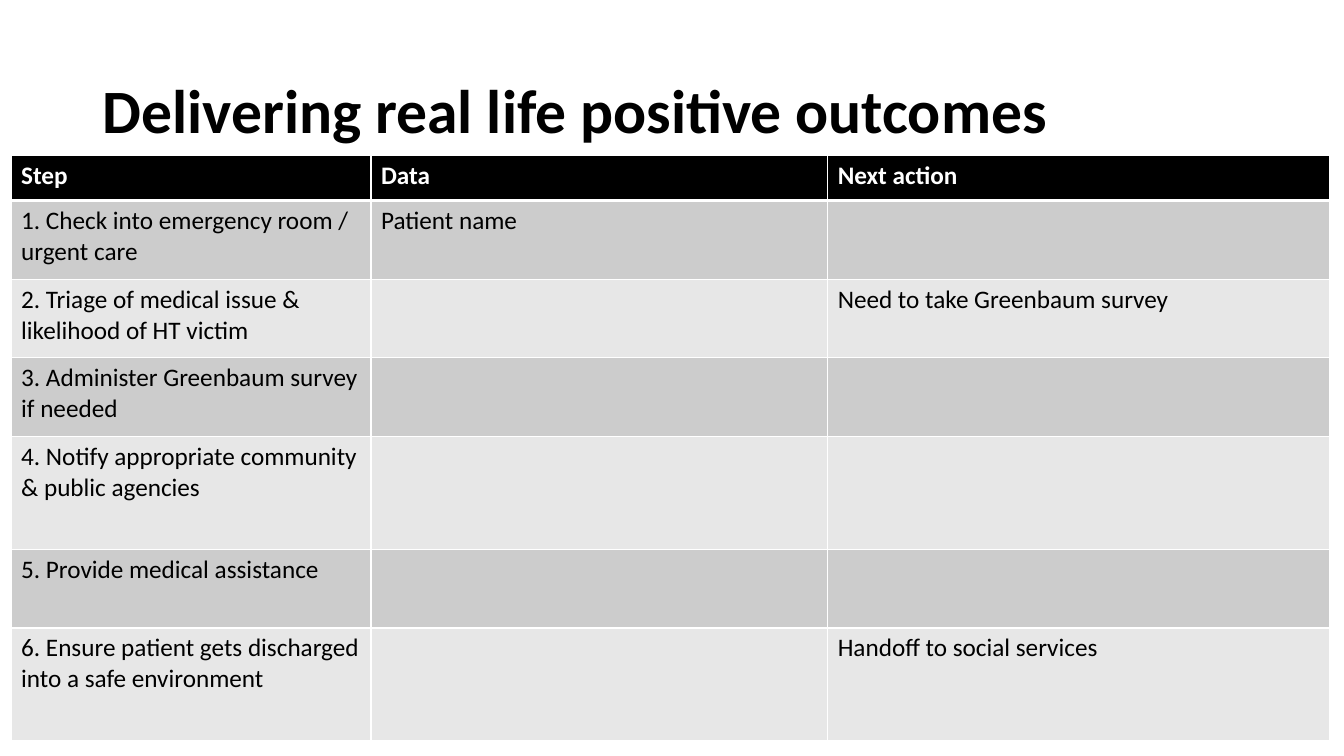
from dataclasses import dataclass

from lxml.etree import SubElement
from pptx import Presentation
from pptx.dml.color import RGBColor
from pptx.enum.text import MSO_ANCHOR
from pptx.oxml.ns import qn
from pptx.slide import Slide
from pptx.table import _Cell
from pptx.text.text import TextFrame
from pptx.util import Inches, Pt


@dataclass(frozen=True)
class Theme:
    """Colours, font and type sizes."""
    font: str = "Calibri"
    title_size: int = 44
    body_size: int = 18
    dark: str = "000000"
    light: str = "FFFFFF"
    bands: tuple[str, str] = ("CCCCCC", "E7E7E7")
    rule: float = 1
    header_rule: float = 3


@dataclass(frozen=True)
class Step:
    """One row of the care pathway."""
    step: str
    data: str = ""
    action: str = ""
    height: float = 0.78


THEME = Theme()
COLUMN_WIDTHS = (3.57, 4.53, 4.98)
STEPS = (
    Step("Step", "Data", "Next action", 0.45),
    Step("1. Check into emergency room / urgent care", "Patient name"),
    Step("2. Triage of medical issue & likelihood of HT victim",
         action="Need to take Greenbaum survey"),
    Step("3. Administer Greenbaum survey if needed"),
    Step("4. Notify appropriate community & public agencies", height=1.12),
    Step("5. Provide medical assistance"),
    Step("6. Ensure patient gets discharged into a safe environment",
         action="Handoff to social services", height=1.12),
)


def write(tf: TextFrame, text: str, size: int, color: str, bold: bool) -> None:
    """Set one paragraph of text and its font."""
    tf.text = text
    p = tf.paragraphs[0]
    for font in (p.font, *(r.font for r in p.runs)):
        font.name = THEME.font
        font.size = Pt(size)
        font.bold = bold
        font.color.rgb = RGBColor.from_string(color)


def add_borders(cell: _Cell, top: float, bottom: float) -> None:
    """Draw light rules on the four sides of a cell."""
    tc_pr = cell._tc.get_or_add_tcPr()
    widths = {"L": THEME.rule, "R": THEME.rule, "T": top, "B": bottom}
    for side, width in widths.items():
        ln = SubElement(tc_pr, qn(f"a:ln{side}"), w=str(Pt(width)))
        fill = SubElement(ln, qn("a:solidFill"))
        SubElement(fill, qn("a:srgbClr"), val=THEME.light)


def add_title(s: Slide, text: str) -> None:
    """Add the slide heading."""
    sp = s.shapes.add_textbox(Inches(0.92), Inches(0.4), Inches(11.5), Inches(1.45))
    tf = sp.text_frame
    tf.word_wrap = True
    tf.vertical_anchor = MSO_ANCHOR.MIDDLE
    write(tf, text, THEME.title_size, THEME.dark, True)
    tf.paragraphs[0].line_spacing = 0.9


def add_steps(s: Slide, steps: tuple[Step, ...]) -> None:
    """Add the table of steps with a dark header and banded rows."""
    frame = s.shapes.add_table(
        len(steps), len(COLUMN_WIDTHS), Inches(0.11), Inches(1.54),
        Inches(sum(COLUMN_WIDTHS)), Inches(sum(step.height for step in steps)))
    table = frame.table
    for column, width in zip(table.columns, COLUMN_WIDTHS):
        column.width = Inches(width)
    for i, (row, step) in enumerate(zip(table.rows, steps)):
        row.height = Inches(step.height)
        header = i == 0
        fill = THEME.dark if header else THEME.bands[(i - 1) % 2]
        color = THEME.light if header else THEME.dark
        top = THEME.header_rule if i == 1 else THEME.rule
        bottom = THEME.header_rule if header else THEME.rule
        for cell, text in zip(row.cells, (step.step, step.data, step.action)):
            add_borders(cell, top, bottom)
            cell.fill.solid()
            cell.fill.fore_color.rgb = RGBColor.from_string(fill)
            write(cell.text_frame, text, THEME.body_size, color, header)


def main() -> None:
    """Build and save the slide."""
    prs = Presentation()
    prs.slide_width, prs.slide_height = Inches(13.33), Inches(7.5)
    s = prs.slides.add_slide(prs.slide_layouts[6])
    add_title(s, "Delivering real life positive outcomes")
    add_steps(s, STEPS)
    prs.save("out.pptx")


if __name__ == "__main__":
    main()
